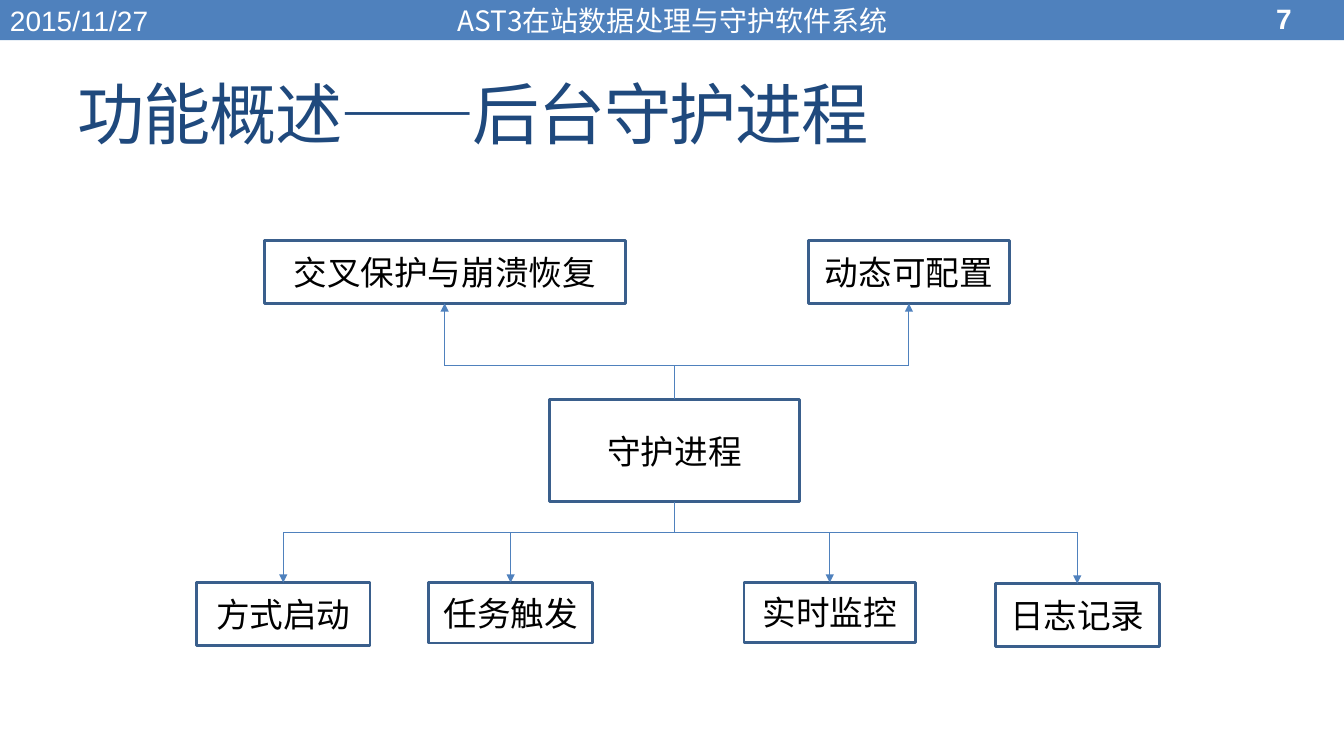
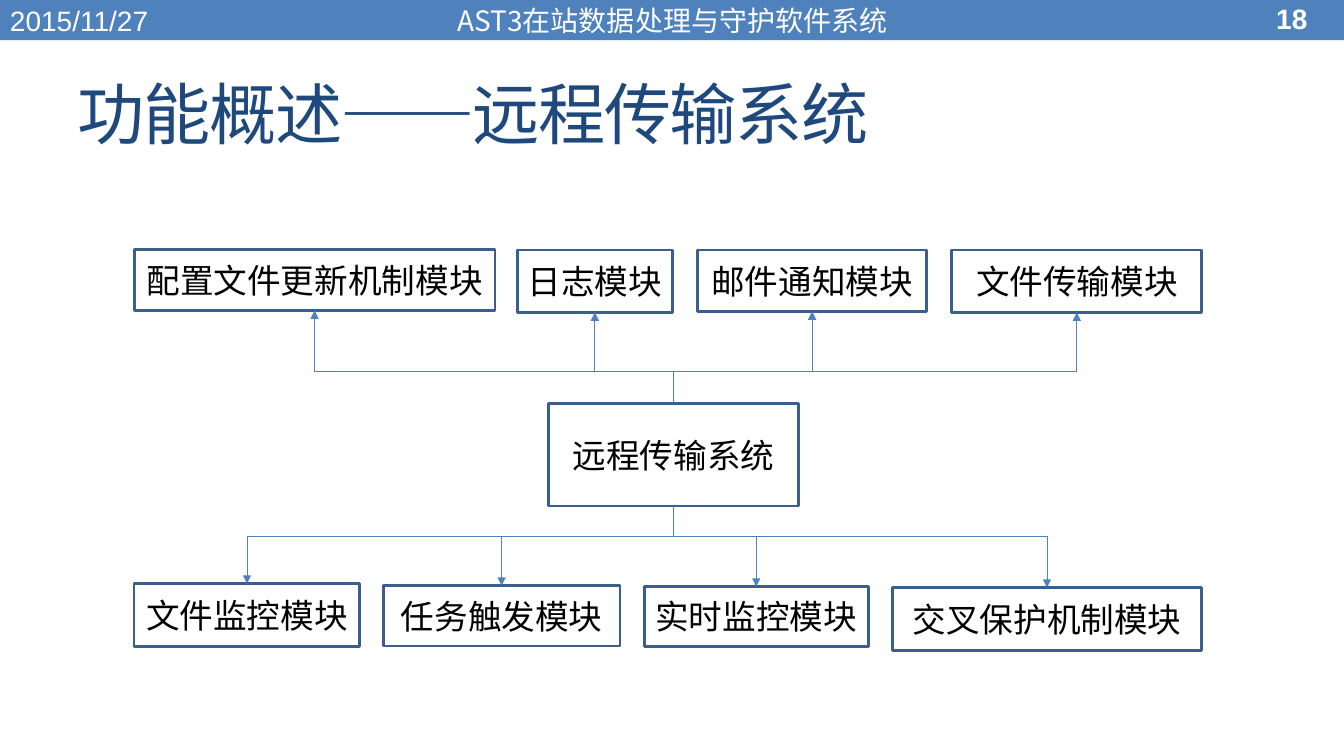
from lxml.etree import SubElement
from pptx import Presentation
from pptx.dml.color import RGBColor
from pptx.enum.lang import MSO_LANGUAGE_ID as Lang
from pptx.enum.shapes import MSO_CONNECTOR as Connector, MSO_SHAPE as Preset
from pptx.enum.text import MSO_ANCHOR as Anchor, MSO_AUTO_SIZE as AutoSize, PP_ALIGN as Align
from pptx.oxml.ns import qn
from pptx.util import Pt

PX = 9144
COLORS = {
    "band": "4F81BD",
    "title": "1F497D",
    "frame": "3A5F8C",
    "text": "000000",
    "white": "FFFFFF",
}
LATIN, CJK = "Arial", "Noto Sans CJK JP"
TOP_SITE, BOTTOM_SITE = 0, 2

DIAGRAMS = [
    {
        "title": "功能概述——后台守护进程",
        "page": "7",
        "core": ("守护进程", 545, 396, 248, 102),
        "upper_bus": 363,
        "upper": [
            ("交叉保护与崩溃恢复", 262, 239, 358, 62),
            ("动态可配置", 802, 239, 199, 62),
        ],
        "lower_bus": 528,
        "lower": [
            ("方式启动", 195, 578, 172, 62),
            ("任务触发", 425, 578, 163, 60),
            ("实时监控", 738, 578, 170, 59),
            ("日志记录", 987, 579, 163, 62),
        ],
    },
    {
        "title": "功能概述——远程传输系统",
        "page": "18",
        "core": ("远程传输系统", 544, 400, 248, 102),
        "upper_bus": 369,
        "upper": [
            ("配置文件更新机制模块", 133, 248, 358, 60),
            ("日志模块", 513, 248, 154, 62),
            ("邮件通知模块", 692, 248, 227, 61),
            ("文件传输模块", 944, 248, 248, 62),
        ],
        "lower_bus": 532,
        "lower": [
            ("文件监控模块", 133, 579, 224, 62),
            ("任务触发模块", 380, 581, 235, 60),
            ("实时监控模块", 639, 582, 222, 59),
            ("交叉保护机制模块", 885, 583, 307, 62),
        ],
    },
]


def rgb(name):
    return RGBColor.from_string(COLORS[name])


def px(*lengths):
    return [length * PX for length in lengths]


def center_x(shape):
    return shape.left + shape.width // 2


class Deck:
    def __init__(self):
        self.prs = Presentation()
        self.prs.slide_width, self.prs.slide_height = px(1333, 750)
        self.layout = self.prs.slide_layouts[5]
        self.slide = None

    def new_slide(self, title, page):
        first = self.slide is None
        self.slide = self.prs.slides.add_slide(self.layout)
        if first:
            self.master_band()
        self.title(title)
        self.label("2015/11/27", (0, 2, 422, 36))
        self.label("AST3在站数据处理与守护软件系统", (367, 2, 600, 36), Align.CENTER, CJK)
        self.label(page, (1256, 0, 77, 36), bold=True)

    def master_band(self):
        band = self.slide.shapes.add_shape(Preset.RECTANGLE, *px(0, 0, 1333, 40))
        band.shadow.inherit = False
        band.fill.solid()
        band.fill.fore_color.rgb = rgb("band")
        band.line.fill.background()
        self.prs.slide_master.shapes.element.insert(2, band.element)

    def add_text(self, shape, text, size, color, align=Align.LEFT, latin=LATIN, bold=False, wrap=True):
        frame = shape.text_frame
        frame.word_wrap = wrap
        frame.auto_size = AutoSize.NONE
        frame.vertical_anchor = Anchor.MIDDLE
        paragraph = frame.paragraphs[0]
        paragraph.alignment = align
        run = paragraph.add_run()
        run.text = text
        font = run.font
        font.size, font.bold, font.name = Pt(size), bold, latin
        font.color.rgb = rgb(color)
        font.language_id = Lang.SIMPLIFIED_CHINESE
        properties = run._r.get_or_add_rPr()
        SubElement(properties, qn("a:ea")).set("typeface", CJK)
        return properties

    def title(self, text):
        heading = self.slide.shapes.title
        heading.left, heading.top, heading.width, heading.height = px(67, 58, 1200, 108)
        self.add_text(heading, text, 48, "title").set("spc", "-100")

    def label(self, text, place, align=Align.LEFT, latin=LATIN, bold=False):
        box = self.slide.shapes.add_textbox(*px(*place))
        self.add_text(box, text, 20, "white", align, latin, bold)

    def module(self, text, *place):
        box = self.slide.shapes.add_shape(Preset.RECTANGLE, *px(*place))
        box.shadow.inherit = False
        box.fill.background()
        box.line.color.rgb = rgb("frame")
        box.line.width = Pt(2.08)
        self.add_text(box, text, 24, "text", Align.CENTER, wrap=False)
        return box

    def line(self, start, end, arrow=False):
        link = self.slide.shapes.add_connector(Connector.STRAIGHT, *start, *end)
        link.line.color.rgb = rgb("band")
        link.line.width = Pt(0.75)
        if arrow:
            SubElement(link.get_or_add_ln(), qn("a:tailEnd")).set("type", "triangle")
        SubElement(link.element.spPr, qn("a:effectLst"))
        return link

    def branch(self, core, modules, bus, core_site, module_site):
        bus_y = bus * PX
        self.line((center_x(modules[0]), bus_y), (center_x(modules[-1]), bus_y))
        trunk = (center_x(core), bus_y)
        self.line(trunk, trunk).begin_connect(core, core_site)
        for module in modules:
            drop = (center_x(module), bus_y)
            self.line(drop, drop, arrow=True).end_connect(module, module_site)

    def diagram(self, content):
        self.new_slide(content["title"], content["page"])
        core = self.module(*content["core"])
        upper = [self.module(*entry) for entry in content["upper"]]
        lower = [self.module(*entry) for entry in content["lower"]]
        self.branch(core, upper, content["upper_bus"], TOP_SITE, BOTTOM_SITE)
        self.branch(core, lower, content["lower_bus"], BOTTOM_SITE, TOP_SITE)


def main():
    deck = Deck()
    for content in DIAGRAMS:
        deck.diagram(content)
    deck.prs.save("out.pptx")


if __name__ == "__main__":
    main()
